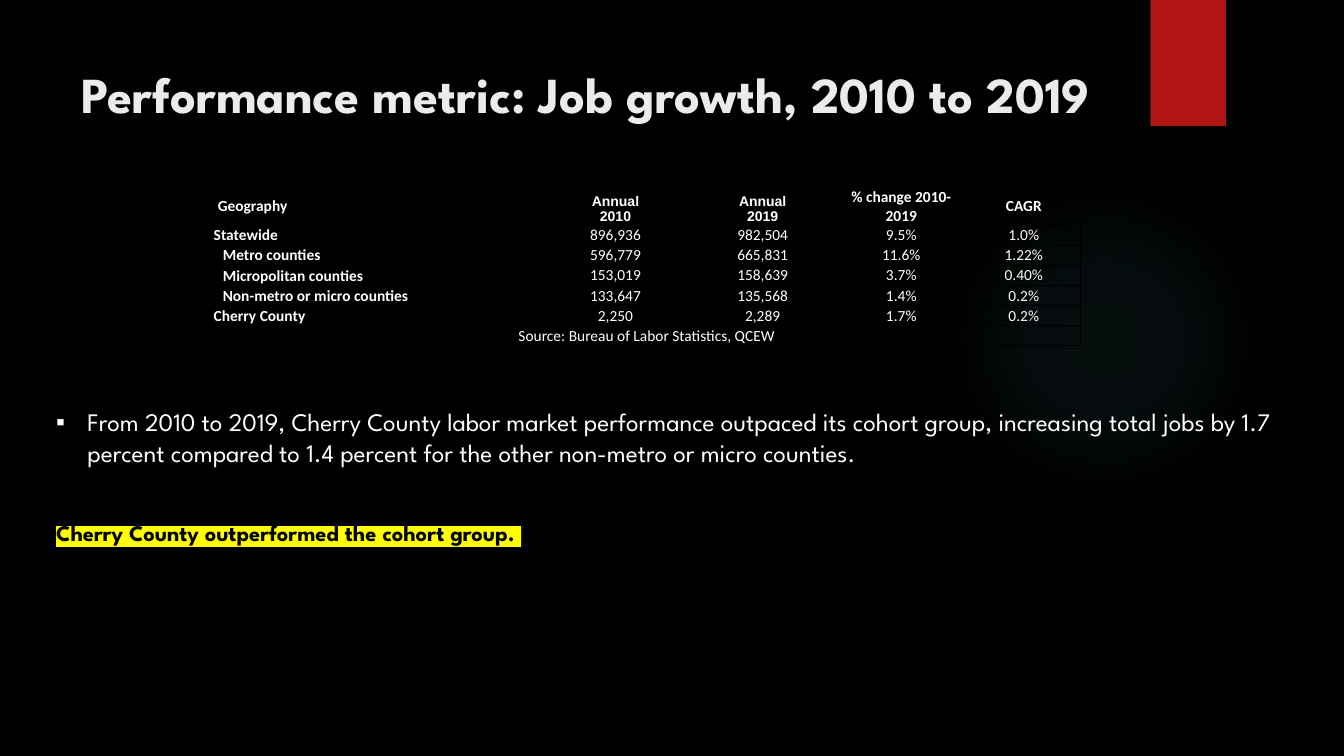
from lxml import etree
from pptx import Presentation, util as u
from pptx.dml.color import RGBColor
from pptx.enum import shapes, text
from pptx.oxml import parse_xml
from pptx.oxml.ns import nsdecls, qn

PX = 9144
BLACK = RGBColor(0x00, 0x00, 0x00)
WHITE = RGBColor(0xFF, 0xFF, 0xFF)
OFF_WHITE = RGBColor(0xEB, 0xEB, 0xEB)
RED = RGBColor(0xB0, 0x15, 0x13)
TEAL = RGBColor(0x50, 0xB9, 0xC1)
YELLOW = RGBColor(0xFF, 0xFF, 0x00)
DISPLAY = "League Spartan"


def add_span(para, words, size, font, color, bold=False):
    span = para.add_run()
    span.text = words
    span.font.size = u.Pt(size)
    span.font.name = font
    span.font.color.rgb = color
    span.font.bold = bold
    return span


def add_box(left, top, width, height):
    box = page.shapes.add_textbox(left * PX, top * PX, width * PX, height * PX)
    box.text_frame.word_wrap = True
    return box.text_frame


deck = Presentation()
deck.slide_width = 1333 * PX
deck.slide_height = 750 * PX
page = deck.slides.add_slide(deck.slide_layouts[6])
page.background.fill.solid()
page.background.fill.fore_color.rgb = BLACK

glow = page.shapes.add_shape(shapes.MSO_SHAPE.OVAL, 941 * PX, 183 * PX, 308 * PX, 308 * PX)
glow.shadow.inherit = False
glow.line.fill.background()
stops = "".join(
    f'<a:gs pos="{pos}000"><a:srgbClr val="{TEAL}"><a:alpha val="{alpha}000"/></a:srgbClr></a:gs>'
    for pos, alpha in [(0, 7), (36, 6), (69, 0)]
)
gradient = parse_xml(
    f'<a:gradFill {nsdecls("a")}><a:gsLst>{stops}</a:gsLst><a:path path="circle">'
    '<a:fillToRect l="50000" t="50000" r="50000" b="50000"/></a:path></a:gradFill>'
)
glow.element.spPr.find(qn("a:prstGeom")).addnext(gradient)

ribbon = page.shapes.add_shape(shapes.MSO_SHAPE.RECTANGLE, 1141 * PX, 0, 75 * PX, 125 * PX)
ribbon.shadow.inherit = False
ribbon.fill.solid()
ribbon.fill.fore_color.rgb = RED
ribbon.line.fill.background()

title = add_box(71, 50, 1230, 85)
title.vertical_anchor = text.MSO_ANCHOR.MIDDLE
add_span(title.paragraphs[0], "Performance metric: Job growth, 2010 to 2019", 36, DISPLAY, OFF_WHITE, True)

rows = [
    ["Geography", "Annual\n2010", "Annual\n2019", "% change 2010-2019", "CAGR"],
    ["Statewide", "896,936", "982,504", "9.5%", "1.0%"],
    ["Metro counties", "596,779", "665,831", "11.6%", "1.22%"],
    ["Micropolitan counties", "153,019", "158,639", "3.7%", "0.40%"],
    ["Non-metro or micro counties", "133,647", "135,568", "1.4%", "0.2%"],
    ["Cherry County", "2,250", "2,289", "1.7%", "0.2%"],
    ["Source: Bureau of Labor Statistics, QCEW", "", "", "", ""],
]
source_row = len(rows) - 1
label_indents = [5, 1, 10, 10, 10, 1, 1]
frame = page.shapes.add_table(len(rows), 5, 211 * PX, 185 * PX, 861 * PX, 158 * PX)
table = frame.table
table.first_row = False
table.horz_banding = False
for column, width in zip(table.columns, [326, 147, 145, 130, 113]):
    column.width = width * PX
for r, values in enumerate(rows):
    table.rows[r].height = (38 if r == 0 else 20) * PX
    for c, value in enumerate(values):
        cell = table.cell(r, c)
        cell.fill.background()
        cell.margin_left = (label_indents[r] if c == 0 else 1) * PX
        cell.margin_top = cell.margin_right = PX
        cell.margin_bottom = 0
        is_label = c == 0 and r < source_row
        is_year = r == 0 and c in (1, 2)
        at_bottom = is_year or (is_label and r > 0)
        cell.vertical_anchor = text.MSO_ANCHOR.BOTTOM if at_bottom else text.MSO_ANCHOR.MIDDLE
        properties = cell._tc.get_or_add_tcPr()
        for i, side in enumerate(["lnL", "lnR", "lnT", "lnB"]):
            border = etree.Element(qn(f"a:{side}"), w=str(u.Pt(0.5)))
            fill = etree.SubElement(border, qn("a:solidFill"))
            etree.SubElement(fill, qn("a:srgbClr"), val=str(BLACK))
            properties.insert(i, border)
        para = cell.text_frame.paragraphs[0]
        para.font.size = u.Pt(11)
        if not is_label:
            para.alignment = text.PP_ALIGN.CENTER
        size, font = (10, "Arial") if is_year else (11, "Calibri")
        for i, words in enumerate(value.split("\n") if value else []):
            if i:
                para.add_line_break()
            add_span(para, words, size, font, WHITE, r == 0 or is_label)
table.cell(source_row, 0).merge(table.cell(source_row, 4))

body = add_box(46, 398, 1230, 174)
finding = body.paragraphs[0]
finding.line_spacing = u.Pt(22)
indent = finding._p.get_or_add_pPr()
indent.set("marL", str(31 * PX))
indent.set("indent", str(-31 * PX))
etree.SubElement(indent, qn("a:buFont"), typeface="Arial")
etree.SubElement(indent, qn("a:buChar"), char="▪")
add_span(
    finding,
    "From 2010 to 2019, Cherry County labor market performance outpaced its cohort group, "
    "increasing total jobs by 1.7 percent compared to 1.4 percent for the other non-metro or micro counties.",
    18, DISPLAY, WHITE,
)

verdict = body.add_paragraph()
verdict.space_before = u.Pt(37)
span = add_span(verdict, "Cherry County outperformed the cohort group. ", 16, DISPLAY, BLACK, True)
highlight = etree.Element(qn("a:highlight"))
etree.SubElement(highlight, qn("a:srgbClr"), val=str(YELLOW))
span.font._element.find(qn("a:solidFill")).addnext(highlight)

deck.save("out.pptx")
